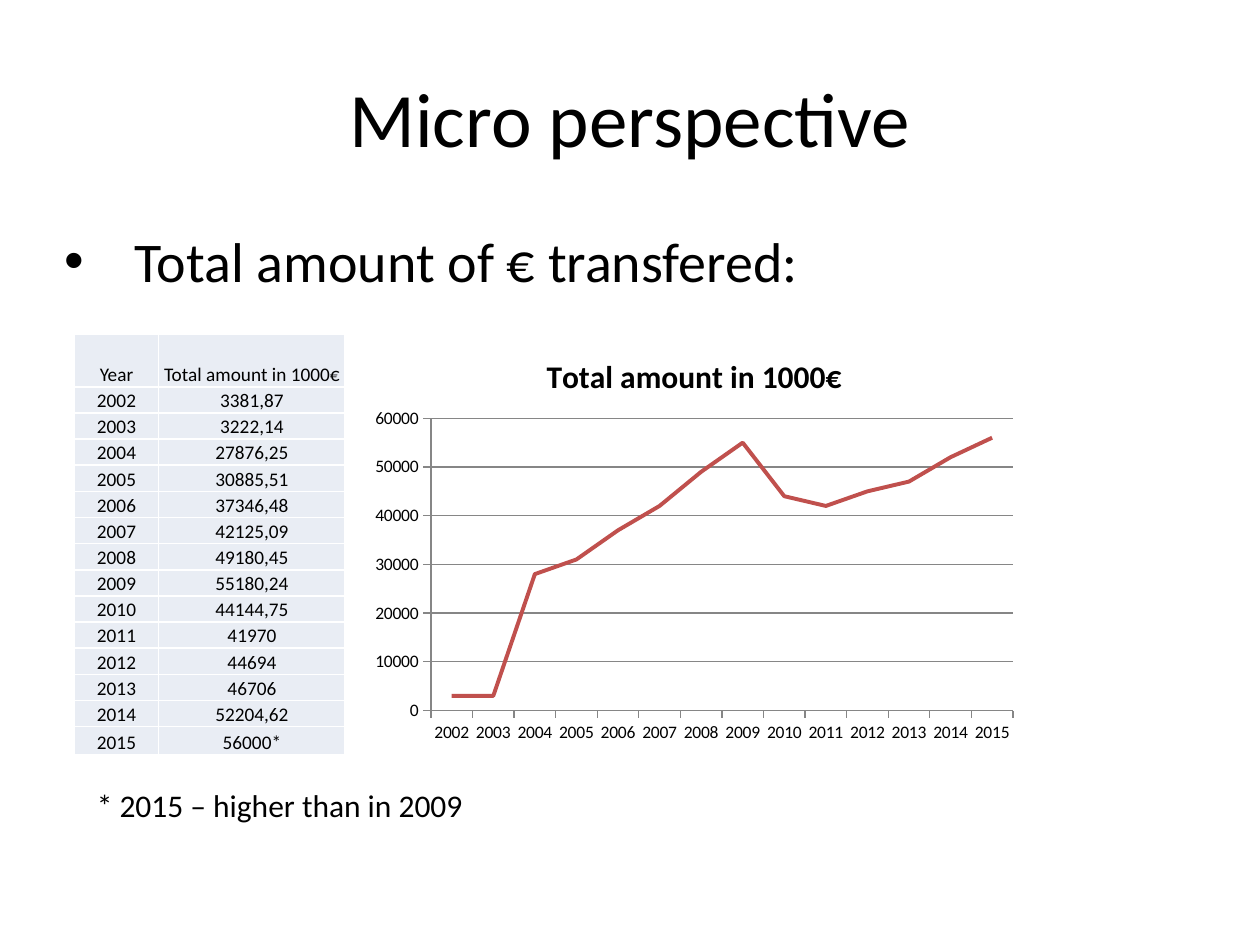
from lxml.etree import SubElement
from pptx import Presentation
from pptx.chart.data import CategoryChartData
from pptx.dml.color import RGBColor
from pptx.enum.chart import XL_CHART_TYPE, XL_MARKER_STYLE, XL_TICK_MARK
from pptx.enum.text import MSO_ANCHOR, PP_ALIGN
from pptx.oxml.ns import qn
from pptx.util import Inches, Pt

FONT = "Calibri"
BLACK = RGBColor(0x00, 0x00, 0x00)
WHITE = RGBColor(0xFF, 0xFF, 0xFF)
PALE_BLUE = RGBColor(0xE9, 0xED, 0xF4)
RED = RGBColor(0xC0, 0x50, 0x4D)
GRAY = RGBColor(0x86, 0x86, 0x86)

HEADING = "Micro perspective"
TOPIC = "Total amount of € transfered:"
FOOTNOTE = "* 2015 – higher than in 2009"
AMOUNT_LABEL = "Total amount in 1000€"
FIRST_YEAR = 2002
AMOUNTS = [
    "3381,87", "3222,14", "27876,25", "30885,51", "37346,48", "42125,09", "49180,45",
    "55180,24", "44144,75", "41970", "44694", "46706", "52204,62", "56000*",
]
YEARS = [str(FIRST_YEAR + offset) for offset in range(len(AMOUNTS))]
TABLE_ROWS = [("Year", AMOUNT_LABEL), *zip(YEARS, AMOUNTS)]
TABLE_BOX = (0.59, 2.65, 2.15, 3.34)
YEAR_WIDTH = 0.67
HEADER_HEIGHT = 0.42
LAST_HEIGHT = 0.22
CHART_BOX = (2.87, 2.65, 5.28, 3.31)
PLOT_BOX = (3.42, 3.32, 4.62, 2.32)


def set_font(font, size, bold=False):
    font.name = FONT
    font.size = Pt(size)
    font.bold = bold
    font.color.rgb = BLACK


def add_text(slide, text, box, size):
    frame = slide.shapes.add_textbox(*map(Inches, box)).text_frame
    frame.word_wrap = True
    paragraph = frame.paragraphs[0]
    paragraph.text = text
    set_font(paragraph.font, size)
    return paragraph


def add_bullet(paragraph, margin, indent):
    properties = paragraph._p.get_or_add_pPr()
    properties.set("marL", str(Inches(margin)))
    properties.set("indent", str(Inches(indent)))
    SubElement(properties, qn("a:buFont"), typeface="Arial")
    SubElement(properties, qn("a:buChar"), char="•")


def add_borders(cell):
    properties = cell._tc.get_or_add_tcPr()
    for side in ("lnL", "lnR", "lnT", "lnB"):
        border = SubElement(properties, qn(f"a:{side}"), w=str(Pt(1)))
        fill = SubElement(border, qn("a:solidFill"))
        SubElement(fill, qn("a:srgbClr"), val=str(WHITE))


def format_cell(cell, text):
    add_borders(cell)
    cell.fill.solid()
    cell.fill.fore_color.rgb = PALE_BLUE
    cell.margin_left = cell.margin_right = cell.margin_top = Inches(0.01)
    cell.margin_bottom = 0
    cell.vertical_anchor = MSO_ANCHOR.BOTTOM
    paragraph = cell.text_frame.paragraphs[0]
    paragraph.text = text
    paragraph.alignment = PP_ALIGN.CENTER
    set_font(paragraph.font, 11)


def add_amount_table(slide):
    width, height = TABLE_BOX[2:]
    column_widths = (YEAR_WIDTH, width - YEAR_WIDTH)
    middle_count = len(AMOUNTS) - 1
    middle_height = (height - HEADER_HEIGHT - LAST_HEIGHT) / middle_count
    row_heights = [HEADER_HEIGHT] + [middle_height] * middle_count + [LAST_HEIGHT]
    table = slide.shapes.add_table(
        len(TABLE_ROWS), len(column_widths), *map(Inches, TABLE_BOX)).table
    table.first_row = table.horz_banding = False
    for column, column_width in zip(table.columns, column_widths):
        column.width = Inches(column_width)
    for row, row_height, texts in zip(table.rows, row_heights, TABLE_ROWS):
        row.height = Inches(row_height)
        for cell, text in zip(row.cells, texts):
            format_cell(cell, text)


def place_plot(chart):
    left, top, width, height = CHART_BOX
    plot_left, plot_top, plot_width, plot_height = PLOT_BOX
    plot_area = chart._chartSpace.chart.plotArea
    for old_layout in plot_area.findall(qn("c:layout")):
        plot_area.remove(old_layout)
    layout = SubElement(plot_area, qn("c:layout"))
    plot_area.insert(0, layout)
    manual = SubElement(layout, qn("c:manualLayout"))
    settings = {
        "layoutTarget": "inner", "xMode": "edge", "yMode": "edge",
        "x": (plot_left - left) / width, "y": (plot_top - top) / height,
        "w": plot_width / width, "h": plot_height / height,
    }
    for tag, value in settings.items():
        SubElement(manual, qn(f"c:{tag}"), val=str(value))


def add_amount_chart(slide):
    data = CategoryChartData()
    data.categories = YEARS
    data.add_series(AMOUNT_LABEL, [
        round(float(amount.rstrip("*").replace(",", ".")), -3) for amount in AMOUNTS])
    chart = slide.shapes.add_chart(XL_CHART_TYPE.LINE, *map(Inches, CHART_BOX), data).chart
    set_font(chart.font, 10)
    chart.has_legend = False
    chart.has_title = True
    chart.chart_title.include_in_layout = False
    chart_heading = chart.chart_title.text_frame.paragraphs[0]
    chart_heading.text = AMOUNT_LABEL
    set_font(chart_heading.font, 18, bold=True)
    place_plot(chart)

    plot = chart.plots[0]
    plot.vary_by_categories = False
    amounts = plot.series[0]
    amounts.smooth = False
    amounts.marker.style = XL_MARKER_STYLE.NONE
    amounts.format.line.color.rgb = RED
    amounts.format.line.width = Pt(2.25)

    for axis in (chart.category_axis, chart.value_axis):
        axis.major_tick_mark = XL_TICK_MARK.OUTSIDE
        axis.minor_tick_mark = XL_TICK_MARK.NONE
        axis.format.line.color.rgb = GRAY
    chart.value_axis.minimum_scale = 0
    chart.value_axis.maximum_scale = 60000
    chart.value_axis.major_unit = 10000
    chart.value_axis.has_major_gridlines = True
    chart.value_axis.major_gridlines.format.line.color.rgb = GRAY


def main():
    presentation = Presentation()
    presentation.slide_width = Inches(10)
    presentation.slide_height = Inches(7.5)
    slide = presentation.slides.add_slide(presentation.slide_layouts[5])

    title = slide.shapes.title
    title.left, title.top, title.width, title.height = map(Inches, (0.5, 0.3, 9, 1.25))
    title.text_frame.vertical_anchor = MSO_ANCHOR.MIDDLE
    heading = title.text_frame.paragraphs[0]
    heading.text = HEADING
    heading.alignment = PP_ALIGN.CENTER
    set_font(heading.font, 44)

    topic = add_text(slide, TOPIC, (0.35, 1.75, 9.15, 4.95), 32)
    topic.space_before = Pt(6.4)
    add_bullet(topic, 0.62, -0.56)

    add_amount_table(slide)
    add_amount_chart(slide)
    add_text(slide, FOOTNOTE, (0.67, 6.19, 5.04, 0.4), 18)
    presentation.save("out.pptx")


if __name__ == "__main__":
    main()
